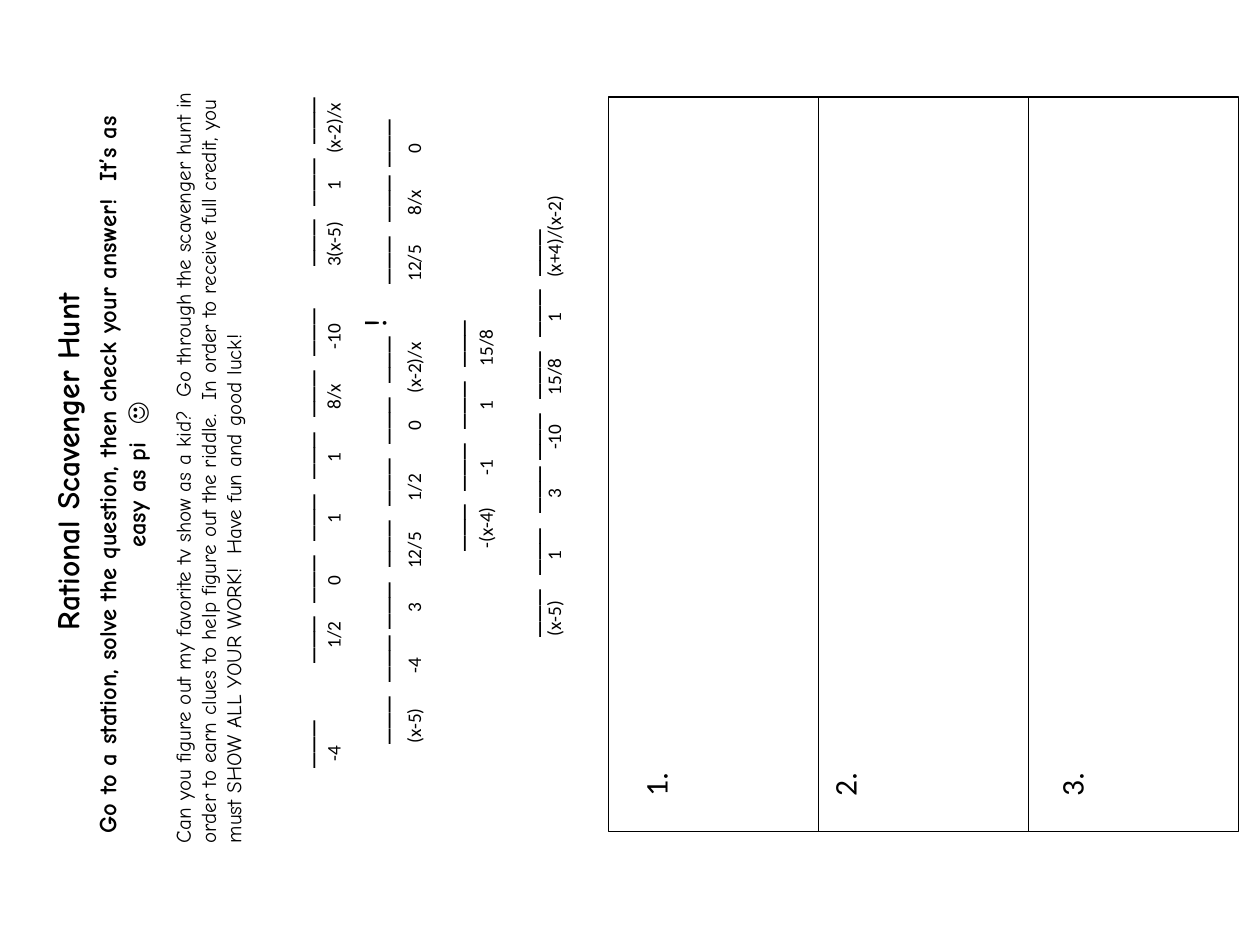
from lxml import etree
from pptx import Presentation
from pptx.dml.color import RGBColor
from pptx.enum.shapes import MSO_SHAPE
from pptx.enum.text import MSO_ANCHOR, MSO_AUTO_SIZE, PP_ALIGN
from pptx.oxml.ns import qn
from pptx.util import Inches, Pt

RECTANGLE = MSO_SHAPE.RECTANGLE
TOP = MSO_ANCHOR.TOP
NO_FIT = MSO_AUTO_SIZE.NONE
LEFT, CENTER = PP_ALIGN.LEFT, PP_ALIGN.CENTER
TITLE_ONLY = 5
BLACK, WHITE = "000000", "FFFFFF"
HAND, PLAIN = "Comic Neue", "Calibri"

WIDTH, HEIGHT = 10, 7.5
RIDDLE_TOP, RIDDLE_LENGTH = 0.6, 6.01
WORK_LEFT, WORK_TOP, WORK_LENGTH = 4.83, 0.77, 5.83
WORK_WIDTH = WIDTH / 6
BLANK = "___"

TITLE = "Rational Scavenger Hunt"
MOTTO = ("Go to a station, solve the question, then check your answer!  "
         "It’s as easy as pi  ☺")
INTRO = ("Can you figure out my favorite tv show as a kid?  Go through the "
         "scavenger hunt in order to earn clues to help figure out the riddle.  "
         "In order to receive full credit, you must SHOW ALL YOUR WORK!  "
         "Have fun and good luck!")
QUESTIONS = [("1.", 0), ("2.", 86.4), ("3.", 108)]

RIDDLE = [
    {"left": 2.55,
     "answers": ["-4", "1/2", "0", "1", "1", "8/x", "-10", "3(x-5)", "1", "(x-2)/x"],
     "blanks": [0.7, 1.53, 2.01, 2.5, 2.99, 3.48, 3.97, 4.68, 5.16, 5.65],
     "centers": [0.63, 1.57, 2, 2.49, 2.98, 3.46, 3.94, 4.67, 5.14, 5.59]},
    {"left": 3.19,
     "answers": ["(x-5)", "-4", "3", "12/5", "1/2", "0", "(x-2)/x", "12/5", "8/x", "0"],
     "blanks": [0.89, 1.38, 1.8, 2.29, 2.78, 3.27, 3.75, 4.54, 5.03, 5.47],
     "centers": [0.85, 1.33, 1.79, 2.24, 2.74, 3.23, 3.69, 4.52, 5, 5.43],
     "mark": ("!", 4.04)},
    {"left": 3.76,
     "answers": ["-(x-4)", "-1", "1", "15/8"],
     "blanks": [2.42, 2.9, 3.39, 3.88],
     "centers": [2.42, 2.9, 3.39, 3.85]},
    {"left": 4.3,
     "answers": ["(x-5)", "1", "3", "-10", "15/8", "1", "(x+4)/(x-2)"],
     "blanks": [1.74, 2.23, 2.72, 3.14, 3.63, 4.12, 4.6],
     "centers": [1.7, 2.2, 2.69, 3.14, 3.62, 4.09, 4.73]},
]


def color(value):
    return RGBColor.from_string(value)


def turn(box, left, top, width, height, inset=True):
    box.left = Inches(left + (width - height) / 2)
    box.top = Inches(top + (height - width) / 2)
    box.width, box.height = Inches(height), Inches(width)
    box.rotation = 270
    frame = box.text_frame
    frame.word_wrap = True
    frame.auto_size = NO_FIT
    frame.vertical_anchor = TOP
    frame.margin_left = frame.margin_right = Inches(0.1 if inset else 0)
    frame.margin_top = frame.margin_bottom = Inches(0.05 if inset else 0)
    return frame


def write(frame, text, size=18, font=PLAIN, bold=False, align=LEFT,
          before=0, after=0, tabs=()):
    para = frame.paragraphs[0]
    if para.runs:
        para = frame.add_paragraph()
    para.alignment = align
    para.space_before, para.space_after = Pt(before), Pt(after)
    if tabs:
        stops = etree.SubElement(para._p.get_or_add_pPr(), qn("a:tabLst"))
        for position in tabs:
            etree.SubElement(stops, qn("a:tab"), pos=str(Inches(position)), algn="ctr")
    span = para.add_run()
    span.text = text
    span.font.size = Pt(size)
    span.font.name = font
    span.font.bold = bold
    span.font.color.rgb = color(BLACK)


def spread(frame, words, centers, **style):
    pairs = sorted(zip(centers, words))
    write(frame, "".join("\t" + word for _, word in pairs),
          tabs=[center for center, _ in pairs], **style)


def add_text(page, *place, inset=True):
    return turn(page.shapes.add_textbox(0, 0, 0, 0), *place, inset=inset)


def add_riddle(page):
    blanks = add_text(page, 2.22, RIDDLE_TOP, 2.4, RIDDLE_LENGTH, inset=False)
    for row in RIDDLE:
        words = [BLANK] * len(row["blanks"])
        centers = list(row["blanks"])
        if "mark" in row:
            mark, center = row["mark"]
            words.append(mark)
            centers.append(center)
        spread(blanks, words, centers, after=21.4)
        clues = add_text(page, row["left"], RIDDLE_TOP, 0.19, RIDDLE_LENGTH, inset=False)
        spread(clues, row["answers"], row["centers"], size=11)


def add_work_area(page):
    group = page.shapes.add_group_shape()
    for index in range(len(QUESTIONS)):
        panel = group.shapes.add_shape(
            RECTANGLE, Inches(WORK_LEFT + index * WORK_WIDTH), Inches(WORK_TOP),
            Inches(WORK_WIDTH), Inches(WORK_LENGTH))
        panel.shadow.inherit = False
        panel.fill.solid()
        panel.fill.fore_color.rgb = color(WHITE)
        panel.line.color.rgb = color(BLACK)
        panel.line.width = Pt(1)
    numbers = add_text(page, 5, 2.34, 3.74, 4.08)
    for number, gap in QUESTIONS:
        write(numbers, number, before=gap)


def main():
    deck = Presentation()
    deck.slide_width, deck.slide_height = Inches(WIDTH), Inches(HEIGHT)
    page = deck.slides.add_slide(deck.slide_layouts[TITLE_ONLY])
    title = turn(page.shapes.title, 0.33, 1.5, 0.4, 4.33)
    write(title, TITLE, font=HAND, bold=True, align=CENTER)
    write(add_text(page, 1.3, 0.33, 0.71, 6.46), INTRO, size=12, font=HAND)
    write(add_text(page, 0.68, 0.75, 0.57, 6.04), MOTTO,
          size=14, font=HAND, bold=True, align=CENTER)
    add_riddle(page)
    add_work_area(page)
    deck.save("out.pptx")


if __name__ == "__main__":
    main()
